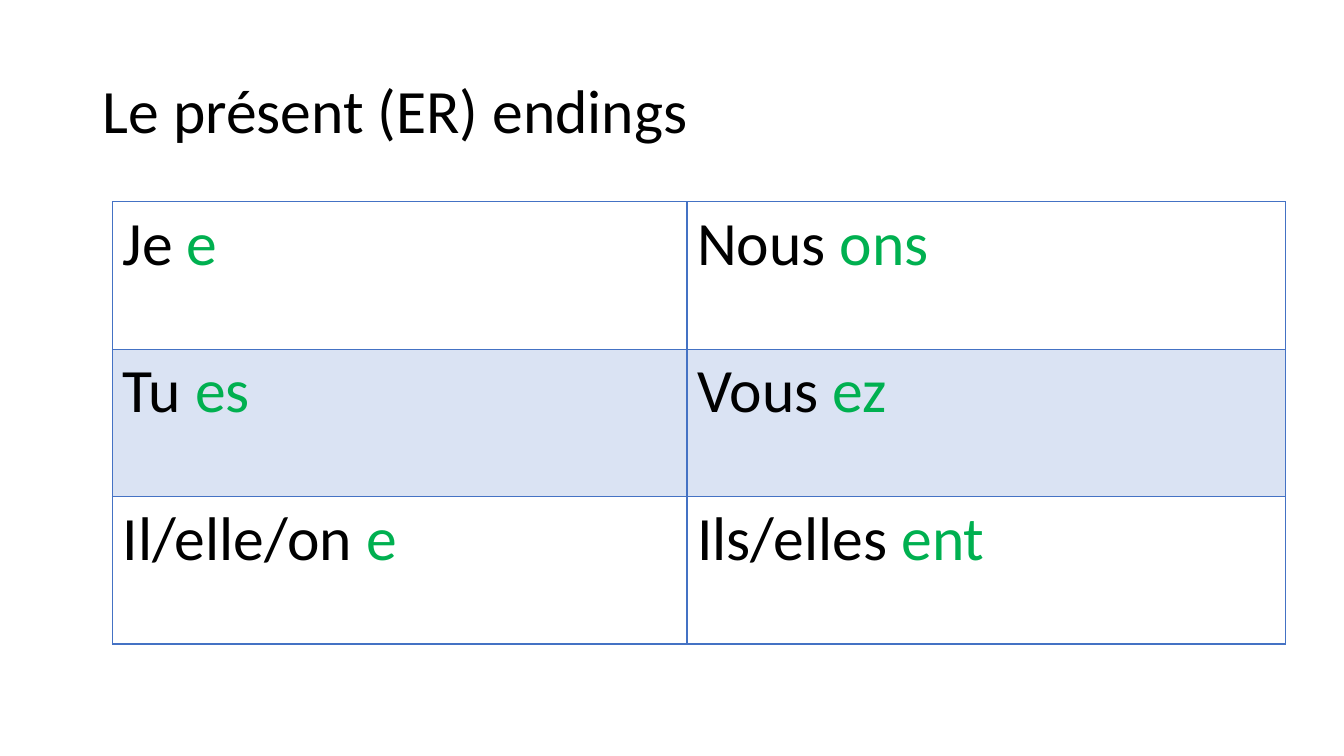
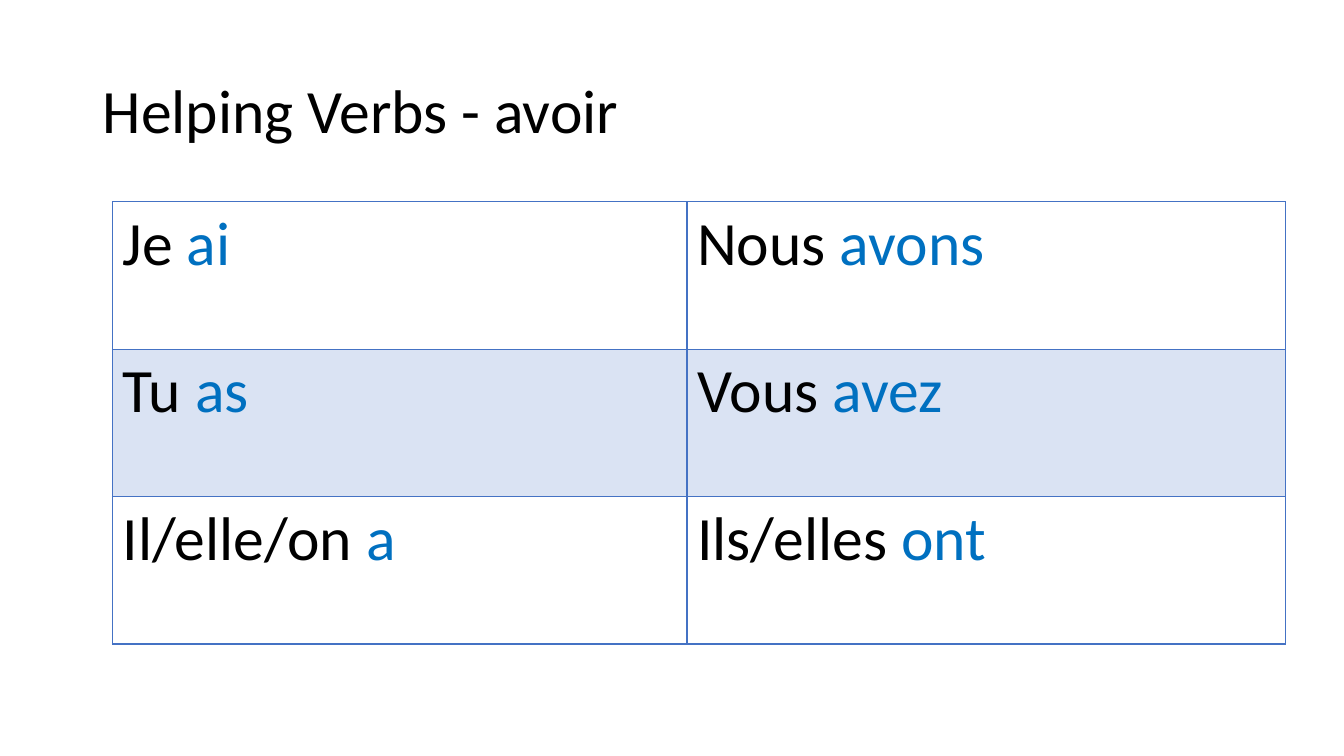
from lxml import etree
from pptx import Presentation
from pptx import util as u
from pptx.dml.color import RGBColor
from pptx.enum import text
from pptx.oxml import ns

HUES = {"ink": "000000", "rule": "4472C4", "band": "DAE3F3",
        "green": "00B050", "blue": "0070C0"}
FONT, SIZE = "Calibri", 44
NAMES = [("Je", "Nous"), ("Tu", "Vous"), ("Il/elle/on", "Ils/elles")]


class Deck:
    """Holds the style and the current slide."""

    def __init__(self):
        self.prs = Presentation()
        self.prs.slide_width = u.Inches(13.33)
        self.prs.slide_height = u.Inches(7.5)

    def add(self):
        self.slide = self.prs.slides.add_slide(self.prs.slide_layouts[6])

    def box(self, left, top, width, height):
        """Turn percentages of the slide into lengths."""
        wide, high = self.prs.slide_width, self.prs.slide_height
        return [int(part * side / 100) for part, side in
                zip((left, top, width, height), (wide, high, wide, high))]

    def style(self, run, hue):
        run.font.name = FONT
        run.font.size = u.Pt(SIZE)
        run.font.color.rgb = RGBColor.from_string(HUES[hue])

    def title(self, words):
        frame = self.slide.shapes.add_textbox(
            *self.box(6.9, 5.33, 86.25, 19.33)).text_frame
        frame.word_wrap = True
        frame.vertical_anchor = text.MSO_ANCHOR.MIDDLE
        frame.text = words
        para = frame.paragraphs[0]
        para.line_spacing = 0.9
        self.style(para.runs[0], "ink")

    def edge(self, cell):
        """Rule all four sides; borders go before the fill."""
        props = cell._tc.get_or_add_tcPr()
        for spot, side in enumerate("LRTB"):
            line = etree.Element(ns.qn("a:ln" + side), w=str(u.Pt(1)))
            fill = etree.SubElement(line, ns.qn("a:solidFill"))
            etree.SubElement(fill, ns.qn("a:srgbClr"), val=HUES["rule"])
            props.insert(spot, line)

    def cell(self, cell, name, end, hue, band):
        para = cell.text_frame.paragraphs[0]
        para.text = name + " "
        self.style(para.runs[0], "ink")
        run = para.add_run()
        run.text = end
        self.style(run, hue)
        if band:
            cell.fill.solid()
            cell.fill.fore_color.rgb = RGBColor.from_string(HUES["band"])
        else:
            cell.fill.background()
        self.edge(cell)

    def verbs(self, ends, hue):
        """Pronouns with coloured endings, every second row shaded."""
        place = self.box(8.37, 26.67, 87.25, 58.53)
        table = self.slide.shapes.add_table(len(NAMES), 2, *place).table
        table.first_row = table.horz_banding = False
        for col, share in zip(table.columns, (0.49, 0.51)):
            col.width = int(place[2] * share)
        for row, pair in enumerate(zip(NAMES, ends)):
            for col, (name, end) in enumerate(zip(*pair)):
                self.cell(table.cell(row, col), name, end, hue, row % 2)


def main():
    deck = Deck()
    pages = [
        ("Le présent (ER) endings", "green",
         [("e", "ons"), ("es", "ez"), ("e", "ent")]),
        ("Helping Verbs - avoir", "blue",
         [("ai", "avons"), ("as", "avez"), ("a", "ont")]),
    ]
    for words, hue, ends in pages:
        deck.add()
        deck.title(words)
        deck.verbs(ends, hue)
    deck.prs.save("out.pptx")


if __name__ == "__main__":
    main()
